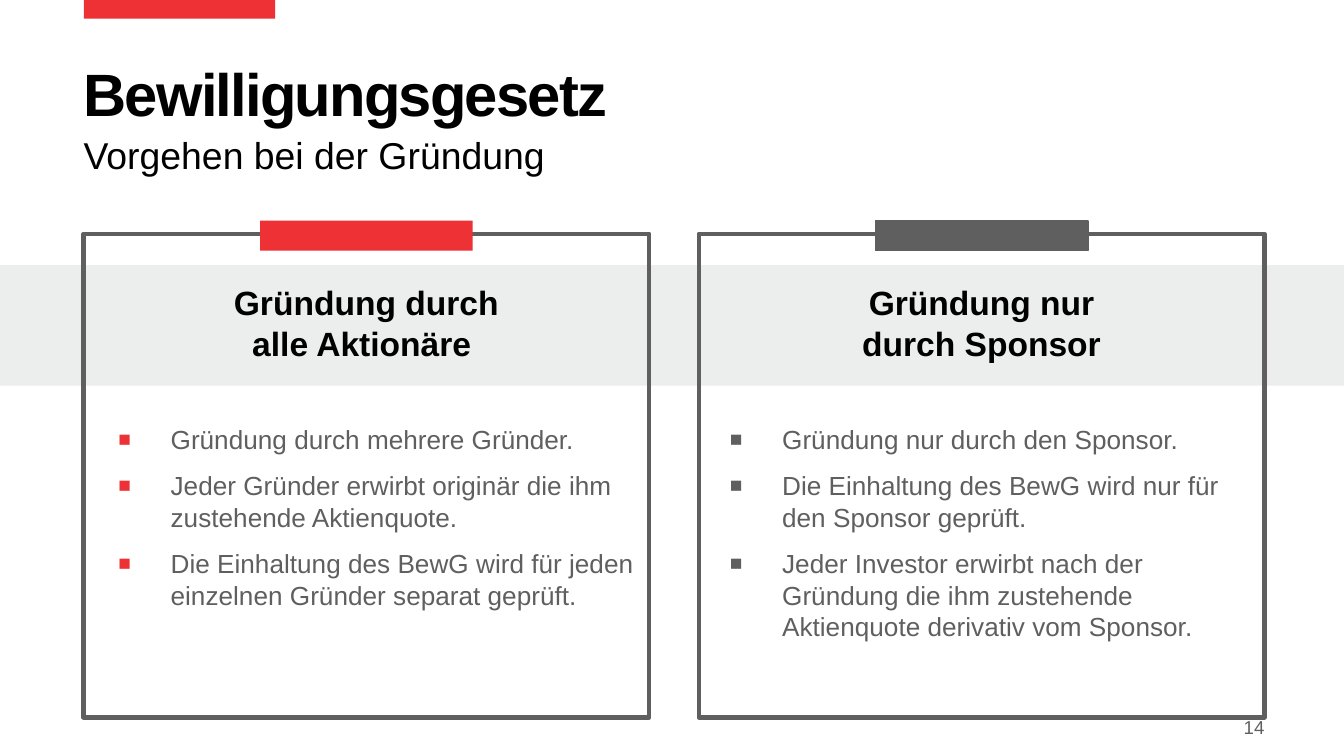
from lxml import etree
from pptx import Presentation
from pptx.dml.color import RGBColor
from pptx.enum.shapes import MSO_SHAPE
from pptx.enum.text import MSO_ANCHOR, MSO_AUTO_SIZE, PP_ALIGN
from pptx.oxml.ns import qn
from pptx.util import Pt

RECTANGLE = MSO_SHAPE.RECTANGLE
TOP, MIDDLE = MSO_ANCHOR.TOP, MSO_ANCHOR.MIDDLE
LEFT, CENTER, RIGHT = PP_ALIGN.LEFT, PP_ALIGN.CENTER, PP_ALIGN.RIGHT
NO_AUTOFIT = MSO_AUTO_SIZE.NONE

RED, GREY, PALE, BLACK = "EE3135", "5F5F5F", "ECEDED", "000000"
WIDTH, HEIGHT = 720, 405
MARGIN = 44.8
PANEL_WIDTH, PANEL_HEIGHT, PANEL_TOP = 303, 259, 125.3
PANEL_PITCH = 329.6
PANELS = [
    {"heading": "Gründung durch alle Aktionäre ", "accent": RED, "tab_line": None,
     "list_inset": 11.4, "list_width": 294.5,
     "points": ["Gründung durch mehrere Gründer.",
                "Jeder Gründer erwirbt originär die ihm zustehende Aktienquote.",
                "Die Einhaltung des BewG wird für jeden einzelnen Gründer separat geprüft."]},
    {"heading": "Gründung nur durch Sponsor", "accent": GREY, "tab_line": GREY,
     "list_inset": 9.4, "list_width": 284.5,
     "points": ["Gründung nur durch den Sponsor.",
                "Die Einhaltung des BewG wird nur für den Sponsor geprüft.",
                "Jeder Investor erwirbt nach der Gründung die ihm zustehende "
                "Aktienquote derivativ vom Sponsor."]},
]


def color(hex_code):
    """Turn a hex string into a colour."""
    return RGBColor.from_string(hex_code)


def add_block(slide, box, fill=None, line=None, line_width=1):
    """Add a rectangle with an optional fill and outline."""
    block = slide.shapes.add_shape(RECTANGLE, *map(Pt, box))
    block.shadow.inherit = False
    if fill:
        block.fill.solid()
        block.fill.fore_color.rgb = color(fill)
    else:
        block.fill.background()
    if line:
        block.line.color.rgb = color(line)
        block.line.width = Pt(line_width)
    else:
        block.line.fill.background()


def write(holder, box, lines, size, hex_code, bold=False, align=LEFT,
          anchor=TOP, insets=(0, 0), after=0, spacing=1):
    """Place a text holder in a box, fill it and return its paragraphs."""
    holder.left, holder.top, holder.width, holder.height = map(Pt, box)
    frame = holder.text_frame
    frame.word_wrap = True
    frame.auto_size = NO_AUTOFIT
    frame.vertical_anchor = anchor
    frame.margin_left = frame.margin_right = Pt(insets[0])
    frame.margin_top = frame.margin_bottom = Pt(insets[1])
    frame.text = "\n".join(lines)
    for paragraph in frame.paragraphs:
        paragraph.alignment = align
        paragraph.space_before = Pt(0)
        paragraph.space_after = Pt(after)
        paragraph.line_spacing = spacing
        font = paragraph.font
        font.name, font.size, font.bold = "Arial", Pt(size), bold
        font.color.rgb = color(hex_code)
    return frame.paragraphs


def add_text(slide, box, text, size, hex_code, **style):
    """Add a one-paragraph text box."""
    write(slide.shapes.add_textbox(*map(Pt, box)), box, [text], size, hex_code, **style)


def add_bullet(paragraph, hex_code, indent):
    """Give a paragraph a small square bullet and a hanging indent."""
    properties = paragraph._p.get_or_add_pPr()
    properties.set("marL", str(Pt(indent)))
    properties.set("indent", str(-Pt(indent)))
    bullet_color = etree.Element(qn("a:buClr"))
    etree.SubElement(bullet_color, qn("a:srgbClr"), val=hex_code)
    bullet_size = etree.Element(qn("a:buSzPct"), val="80000")
    bullet_font = etree.Element(qn("a:buFont"), typeface="Arial")
    bullet = etree.Element(qn("a:buChar"), char="■")
    position = list(properties).index(properties.find(qn("a:defRPr")))
    properties[position:position] = [bullet_color, bullet_size, bullet_font, bullet]


def add_header(slide, subtitle, box):
    """Add the red mark, the title and the subtitle."""
    left, top, width = box
    add_block(slide, (left + 0.2, 0, 102.4, 10), fill=RED)
    title = write(slide.shapes.title, (left, top, width, 36), ["Bewilligungsgesetz"],
                  32, BLACK, bold=True, spacing=0.9)
    for run in title[0].runs:
        run.font._element.set("spc", "-100")
    write(subtitle, (left, top + 36, width, 29), ["Vorgehen bei der Gründung"],
          20, BLACK, after=9)


def add_panel(slide, points_holder, panel, box):
    """Add a framed panel with its tab, heading and list."""
    left, top, width, height = box
    tab_width, heading_width = 113.8, 180
    add_block(slide, box, line=GREY, line_width=2.5)
    add_block(slide, (left + (width - tab_width) / 2, top - 7, tab_width, 16),
              fill=panel["accent"], line=panel["tab_line"])
    add_text(slide, (left + (width - heading_width) / 2, top + 22.3, heading_width, 51),
             panel["heading"], 18, BLACK, bold=True, align=CENTER, insets=(7.2, 3.6))
    points = write(points_holder,
                   (left + panel["list_inset"], top + 98, panel["list_width"], 150),
                   panel["points"], 14, GREY, insets=(7.2, 3.6), after=8)
    for point in points:
        add_bullet(point, panel["accent"], 28)


def main():
    """Build and save the slide."""
    deck = Presentation()
    deck.slide_width, deck.slide_height = Pt(WIDTH), Pt(HEIGHT)
    slide = deck.slides.add_slide(deck.slide_layouts.get_by_name("Comparison"))
    holders = {holder.placeholder_format.idx: holder for holder in slide.placeholders}
    unused = holders[3]._element
    unused.getparent().remove(unused)

    add_header(slide, holders[1], (MARGIN, 34.6, 640))
    add_block(slide, (0, 142, WIDTH, 64.6), fill=PALE)
    for column, (panel, points_holder) in enumerate(zip(PANELS, (holders[2], holders[4]))):
        add_panel(slide, points_holder, panel,
                  (MARGIN + column * PANEL_PITCH, PANEL_TOP, PANEL_WIDTH, PANEL_HEIGHT))
    add_text(slide, (613.4, 381.6, 64, 16), "14", 10, GREY, align=RIGHT, anchor=MIDDLE)
    deck.save("out.pptx")


if __name__ == "__main__":
    main()
